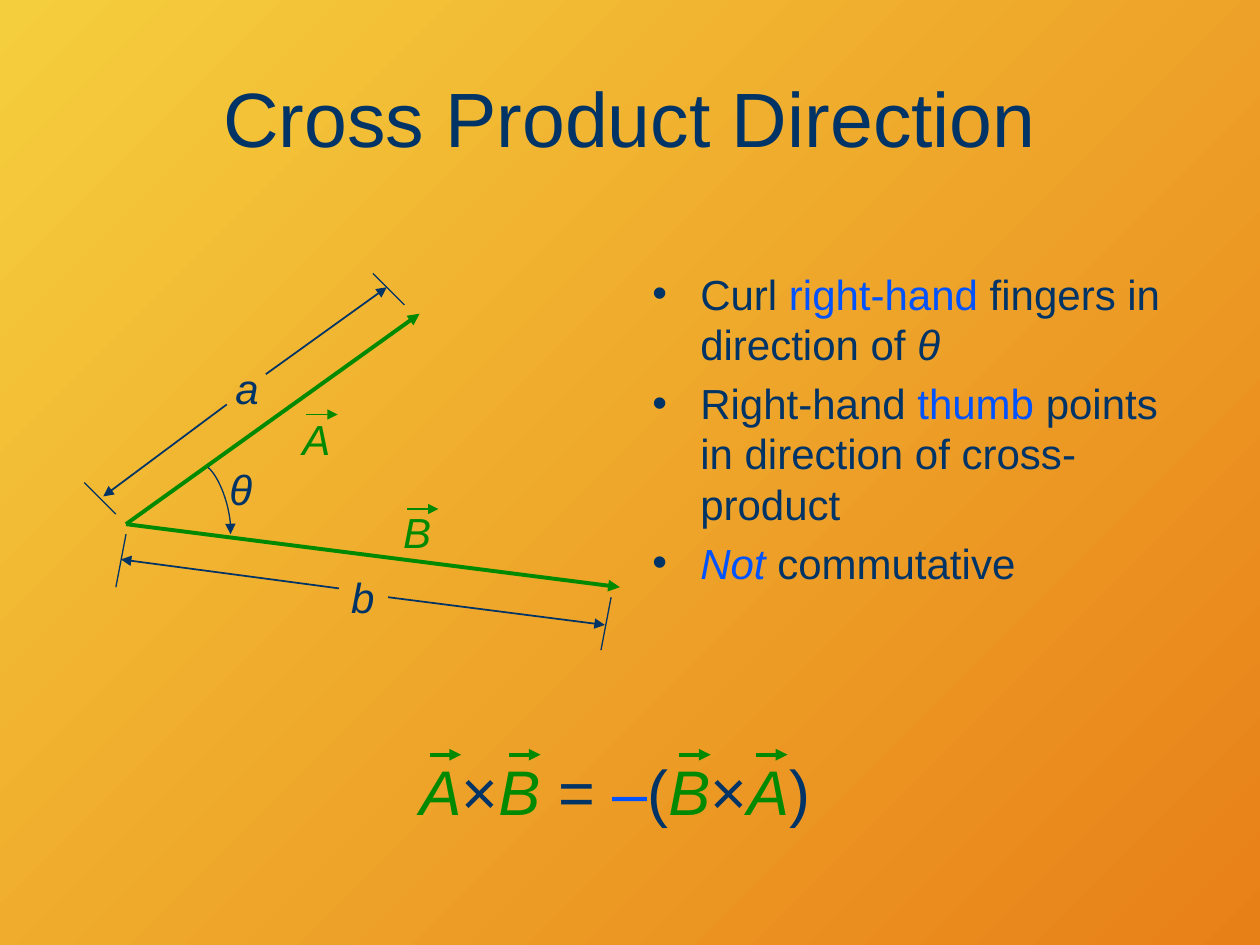
from typing import NamedTuple

from lxml import etree
from pptx import Presentation
from pptx.dml.color import RGBColor
from pptx.enum.shapes import MSO_CONNECTOR
from pptx.enum.text import MSO_ANCHOR, PP_ALIGN
from pptx.oxml.ns import qn
from pptx.util import Inches, Pt

STRAIGHT = MSO_CONNECTOR.STRAIGHT
CENTER, LEFT = PP_ALIGN.CENTER, PP_ALIGN.LEFT
TOP, MIDDLE = MSO_ANCHOR.TOP, MSO_ANCHOR.MIDDLE

FONT = "Arial"
NAVY, GREEN, BLUE = "003366", "008901", "0053FF"
GOLD, ORANGE = "F5CE3D", "E88018"


class Run(NamedTuple):
    text: str
    color: str = NAVY
    italic: bool = False


class Line(NamedTuple):
    start: tuple[float, float]
    end: tuple[float, float]
    color: str = NAVY
    width: float = 1
    arrow: bool = True


class Label(NamedTuple):
    text: str
    left: float
    top: float
    color: str = NAVY


def rgb(value: str) -> RGBColor:
    return RGBColor.from_string(value)


def add_bullet(paragraph) -> None:
    properties = paragraph._p.get_or_add_pPr()
    properties.set("marL", str(Inches(0.38)))
    properties.set("indent", str(-Inches(0.38)))
    color = etree.SubElement(properties, qn("a:buClr"))
    etree.SubElement(color, qn("a:srgbClr"), val=NAVY)
    etree.SubElement(properties, qn("a:buFont"), typeface=FONT)
    etree.SubElement(properties, qn("a:buChar"), char="•")


def add_text(slide, paragraphs: list[list[Run]], left: float, top: float,
             width: float, height: float, *, size: float = 24,
             align=CENTER, anchor=TOP, bullets: bool = False) -> None:
    box = slide.shapes.add_textbox(*map(Inches, (left, top, width, height)))
    frame = box.text_frame
    frame.word_wrap = True
    frame.vertical_anchor = anchor
    for index, runs in enumerate(paragraphs):
        paragraph = frame.add_paragraph() if index else frame.paragraphs[0]
        paragraph.alignment = align
        if bullets:
            paragraph.space_before = Pt(size * 0.2)
            add_bullet(paragraph)
        for item in runs:
            run = paragraph.add_run()
            run.text = item.text
            run.font.name = FONT
            run.font.size = Pt(size)
            run.font.italic = item.italic
            run.font.color.rgb = rgb(item.color)


def style_line(shape, color: str, width: float, arrow: bool) -> None:
    shape.line.color.rgb = rgb(color)
    shape.line.width = Pt(width)
    if arrow:
        etree.SubElement(shape.line._get_or_add_ln(), qn("a:tailEnd"), type="triangle")


def add_line(slide, line: Line) -> None:
    connector = slide.shapes.add_connector(
        STRAIGHT, *map(Inches, (*line.start, *line.end)))
    style_line(connector, line.color, line.width, line.arrow)
    etree.SubElement(connector._element.spPr, qn("a:effectLst"))


def add_curve(slide, controls: list[tuple[float, float]], steps: int = 24) -> None:
    """Draw a cubic Bezier curve that ends in an arrowhead."""
    points = []
    for step in range(steps + 1):
        t = step / steps
        weights = ((1 - t) ** 3, 3 * t * (1 - t) ** 2, 3 * t ** 2 * (1 - t), t ** 3)
        points.append(tuple(
            Inches(sum(weight * value for weight, value in zip(weights, axis)))
            for axis in zip(*controls)))
    builder = slide.shapes.build_freeform(*points[0])
    builder.add_line_segments(points[1:], close=False)
    shape = builder.convert_to_shape()
    shape.shadow.inherit = False
    shape.fill.background()
    style_line(shape, NAVY, 0.75, True)


def vector_mark(left: float, top: float, width: float) -> Line:
    return Line((left, top), (left + 0.25, top), GREEN, width)


TITLE = [[Run("Cross Product Direction")]]
RULES = [
    [Run("Curl "), Run("right-hand", BLUE), Run(" fingers in direction of "),
     Run("θ", italic=True)],
    [Run("Right-hand "), Run("thumb", BLUE),
     Run(" points in direction of cross-product")],
    [Run("Not", BLUE, True), Run(" commutative")],
]
EQUATION = [[
    Run("A", GREEN, True), Run("×"), Run("B ", GREEN, True), Run("= "),
    Run("–", BLUE), Run("("), Run("B", GREEN, True), Run("×"),
    Run("A", GREEN, True), Run(")"),
]]

ORIGIN = (1, 4.16)
VECTORS = [Line(ORIGIN, tip, GREEN, 2.25) for tip in ((3.33, 2.49), (4.92, 4.66))]
DIMENSIONS = [
    Line((1.8, 3.21), (0.82, 3.94)),
    Line((2.11, 2.97), (3.07, 2.28)),
    Line((2.69, 4.67), (0.96, 4.44)),
    Line((3.08, 4.74), (4.8, 4.96)),
]
TICKS = [
    Line((x, y), (x + dx, y + dy), width=0.75, arrow=False)
    for dx, dy, starts in (
        (-0.08, 0.42, ((1, 4.24), (4.85, 4.74))),
        (-0.25, -0.25, ((0.92, 4.08), (3.21, 2.42))),
    )
    for x, y in starts
]
VECTOR_MARKS = [vector_mark(2.43, 3.29, 1), vector_mark(3.23, 4.04, 1)]
EQUATION_MARKS = [vector_mark(left, 5.99, 2.25) for left in (3.41, 4.04, 5.39, 6)]
LABELS = [
    Label("A", 2.3, 3.23, GREEN),
    Label("B", 3.1, 3.97, GREEN),
    Label("a", 1.75, 2.83),
    Label("b", 2.67, 4.49),
    Label("θ", 1.7, 3.63),
]
ANGLE_CURVE = [(1.65, 3.71), (1.74, 3.78), (1.84, 4.04), (1.83, 4.24)]


def main() -> None:
    presentation = Presentation()
    presentation.slide_width, presentation.slide_height = Inches(10), Inches(7.5)
    slide = presentation.slides.add_slide(presentation.slide_layouts[6])

    background = slide.background.fill
    background.gradient()
    background.gradient_angle = 315
    for stop, color in zip(background.gradient_stops, (GOLD, ORANGE)):
        stop.color.rgb = rgb(color)

    add_text(slide, TITLE, 0.5, 0.3, 9, 1.25, size=44, anchor=MIDDLE)
    add_text(slide, RULES, 5.08, 2.08, 4.5, 3.42, align=LEFT, bullets=True)
    for line in VECTORS + VECTOR_MARKS + TICKS + DIMENSIONS:
        add_line(slide, line)
    add_curve(slide, ANGLE_CURVE)
    for label in LABELS:
        add_text(slide, [[Run(label.text, label.color, True)]],
                 label.left, label.top, 0.42, 0.5)
    add_text(slide, EQUATION, 2.92, 5.92, 3.92, 0.7, size=36)
    for line in EQUATION_MARKS:
        add_line(slide, line)

    presentation.save("out.pptx")


if __name__ == "__main__":
    main()
